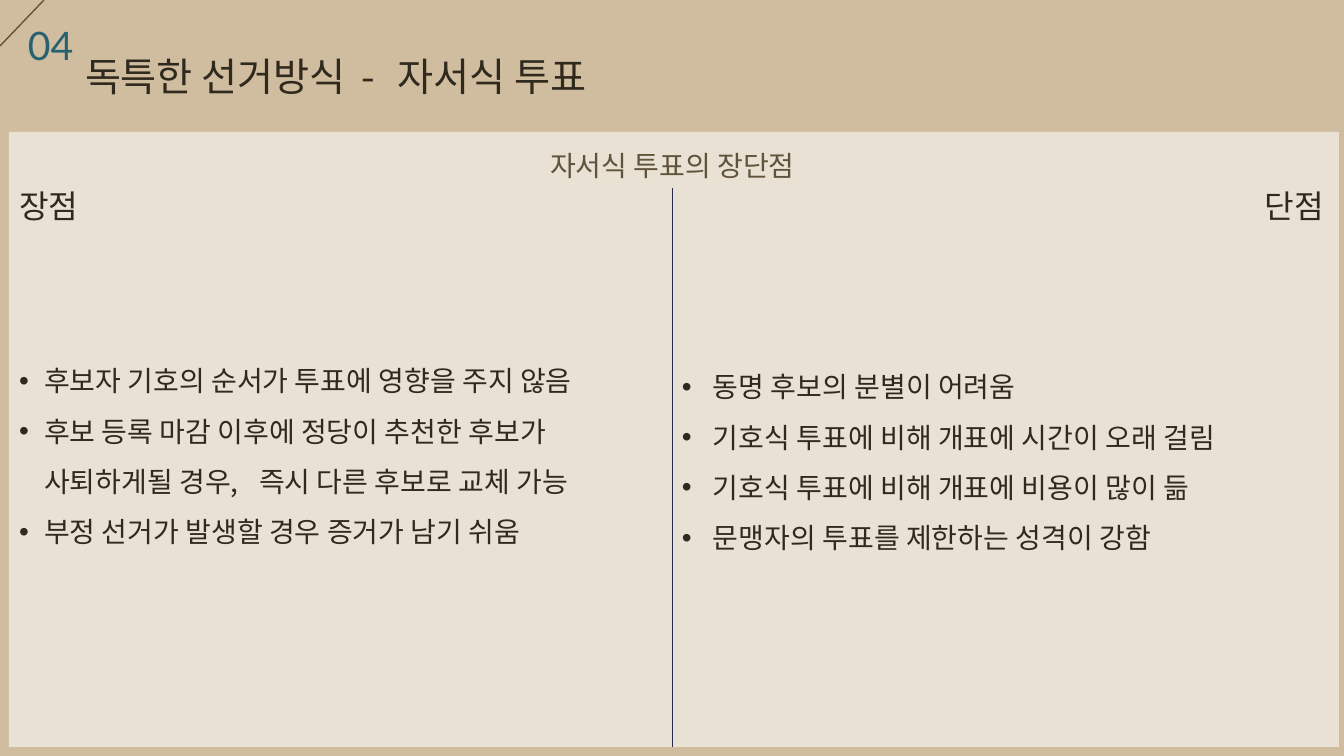
import lxml.etree
import pptx
import pptx.dml.color
import pptx.enum.shapes
import pptx.enum.text
import pptx.oxml.ns
import pptx.util

PX = 914400 / 100.8
COLORS = {
    "sand": "D0BD9F",
    "panel": "FFFFFF",
    "ink": "30291E",
    "brown": "60523B",
    "teal": "286271",
    "navy": "262E4B",
}
KOREAN = "Noto Sans CJK KR"
LATIN = "Lato"
ALIGN = pptx.enum.text.PP_ALIGN

PROS = [
    ["후보자 기호의 순서가 투표에 영향을 주지 않음"],
    ["후보 등록 마감 이후에 정당이 추천한 후보가 사퇴하게될 경우", ", ",
     "즉시 다른 후보로 교체 가능"],
    ["부정 선거가 발생할 경우 증거가 남기 쉬움"],
]
CONS = [
    ["동명 후보의 분별이 어려움"],
    ["기호식 투표에 비해 개표에 시간이 오래 걸림"],
    ["기호식 투표에 비해 개표에 비용이 많이 듦"],
    ["문맹자의 투표를 제한하는 성격이 강함"],
]


def px(length):
    return pptx.util.Emu(round(length * PX))


def rgb(color):
    return pptx.dml.color.RGBColor.from_string(COLORS[color])


def add_xml(parent, tag, **attributes):
    return lxml.etree.SubElement(parent, pptx.oxml.ns.qn(tag), attributes)


class Page:
    """Holds the slide and draws styled elements, measured in px."""

    def __init__(self, presentation):
        self.slide = presentation.slides.add_slide(presentation.slide_layouts[5])
        fill = self.slide.background.fill
        fill.solid()
        fill.fore_color.rgb = rgb("sand")

    def panel(self, left, top, width, height, opacity):
        panel = self.slide.shapes.add_shape(
            pptx.enum.shapes.MSO_SHAPE.RECTANGLE,
            px(left), px(top), px(width), px(height))
        panel.shadow.inherit = False
        panel.line.fill.background()
        panel.fill.solid()
        panel.fill.fore_color.rgb = rgb("panel")
        tint = panel._element.spPr.find(".//" + pptx.oxml.ns.qn("a:srgbClr"))
        add_xml(tint, "a:alpha", val=str(opacity * 1000))

    def line(self, x1, y1, x2, y2, color, weight):
        line = self.slide.shapes.add_connector(
            pptx.enum.shapes.MSO_CONNECTOR.STRAIGHT,
            px(x1), px(y1), px(x2), px(y2))
        line.line.color.rgb = rgb(color)
        line.line.width = pptx.util.Pt(weight)
        add_xml(line._element.spPr, "a:effectLst")

    def title(self, left, top, width, height, runs):
        title = self.slide.shapes.title
        title.left, title.top = px(left), px(top)
        title.width, title.height = px(width), px(height)
        self.add_runs(self.frame(title).paragraphs[0], runs, 28, "ink")

    def text(self, left, top, width, height, words, size, color,
             font=KOREAN, align=ALIGN.LEFT):
        box = self.slide.shapes.add_textbox(px(left), px(top), px(width), px(height))
        self.add_runs(self.frame(box).paragraphs[0], [words], size, color, font, align)

    def bullets(self, left, top, width, height, items, indent):
        box = self.slide.shapes.add_textbox(px(left), px(top), px(width), px(height))
        frame = self.frame(box)
        for index, runs in enumerate(items):
            paragraph = frame.add_paragraph() if index else frame.paragraphs[0]
            properties = paragraph._p.get_or_add_pPr()
            properties.set("marL", str(px(indent)))
            properties.set("indent", str(-px(indent)))
            add_xml(properties, "a:buFont", typeface="Arial")
            add_xml(properties, "a:buChar", char="•")
            paragraph.line_spacing = pptx.util.Pt(36)
            self.add_runs(paragraph, runs, 20, "ink")

    def frame(self, shape):
        frame = shape.text_frame
        frame.word_wrap = True
        frame.auto_size = pptx.enum.text.MSO_AUTO_SIZE.NONE
        frame.vertical_anchor = pptx.enum.text.MSO_ANCHOR.TOP
        frame.margin_left = frame.margin_right = 0
        frame.margin_top = frame.margin_bottom = 0
        return frame

    def add_runs(self, paragraph, runs, size, color, font=KOREAN, align=ALIGN.LEFT):
        """Adds the runs; every second one is punctuation set loosely."""
        paragraph.alignment = align
        for index, words in enumerate(runs):
            run = paragraph.add_run()
            run.text = words
            run.font.size = pptx.util.Pt(size)
            run.font.color.rgb = rgb(color)
            run.font.name = font
            properties = run._r.get_or_add_rPr()
            add_xml(properties, "a:ea", typeface=font)
            if index % 2:
                properties.set("spc", "500")


def main():
    presentation = pptx.Presentation()
    presentation.slide_width = px(1344)
    presentation.slide_height = px(756)
    page = Page(presentation)

    page.panel(9, 132, 1330, 615, opacity=55)
    page.line(44, 0, 0, 46, "brown", 1)
    page.text(28, 21, 60, 48, "04", 28, "teal", font=LATIN)
    page.title(85, 52, 560, 57, ["독특한 선거방식", " - ", "자서식 투표"])

    page.text(9, 149, 1327, 42, "자서식 투표의 장단점", 20, "brown", align=ALIGN.CENTER)
    page.line(672, 188, 672, 747, "navy", 0.5)

    page.text(19, 186, 640, 48, "장점", 23, "ink")
    page.bullets(19, 347, 643, 210, PROS, indent=25)
    page.text(684, 186, 640, 48, "단점", 23, "ink", align=ALIGN.RIGHT)
    page.bullets(682, 353, 643, 210, CONS, indent=31)

    presentation.save("out.pptx")


if __name__ == "__main__":
    main()
